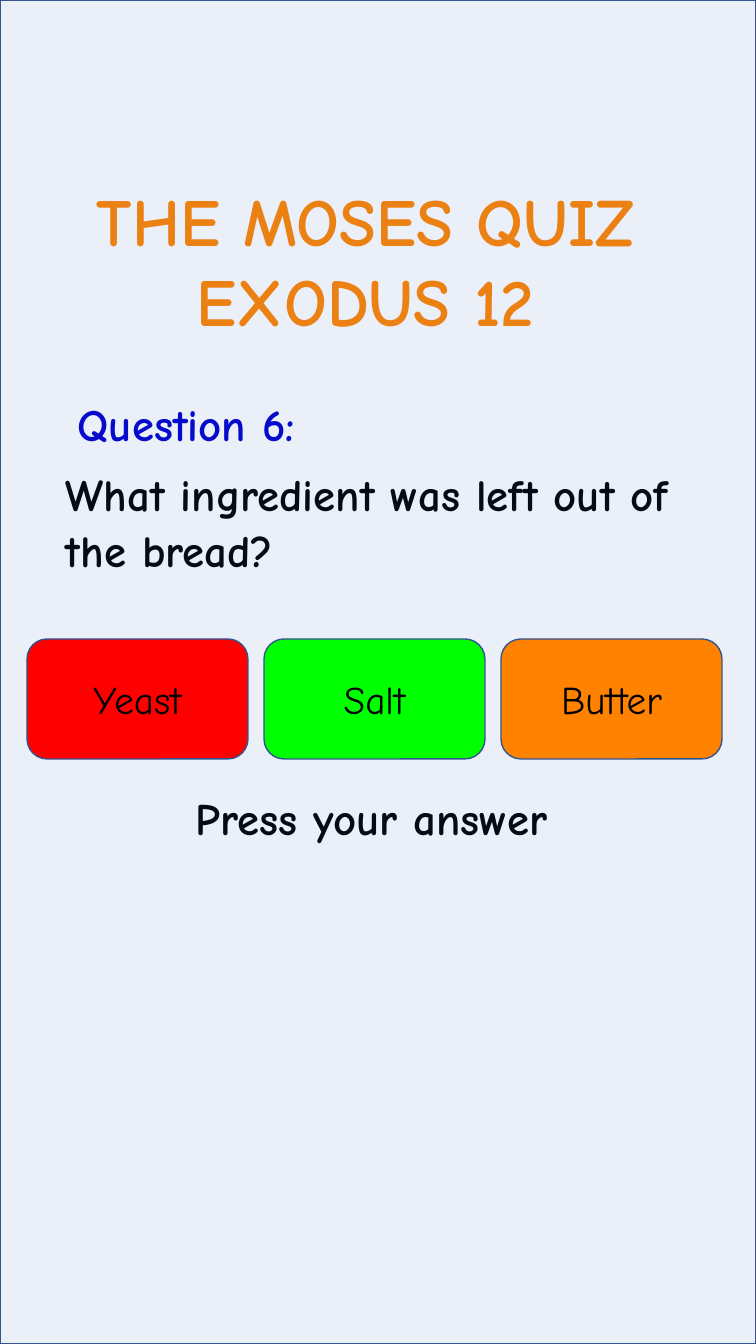
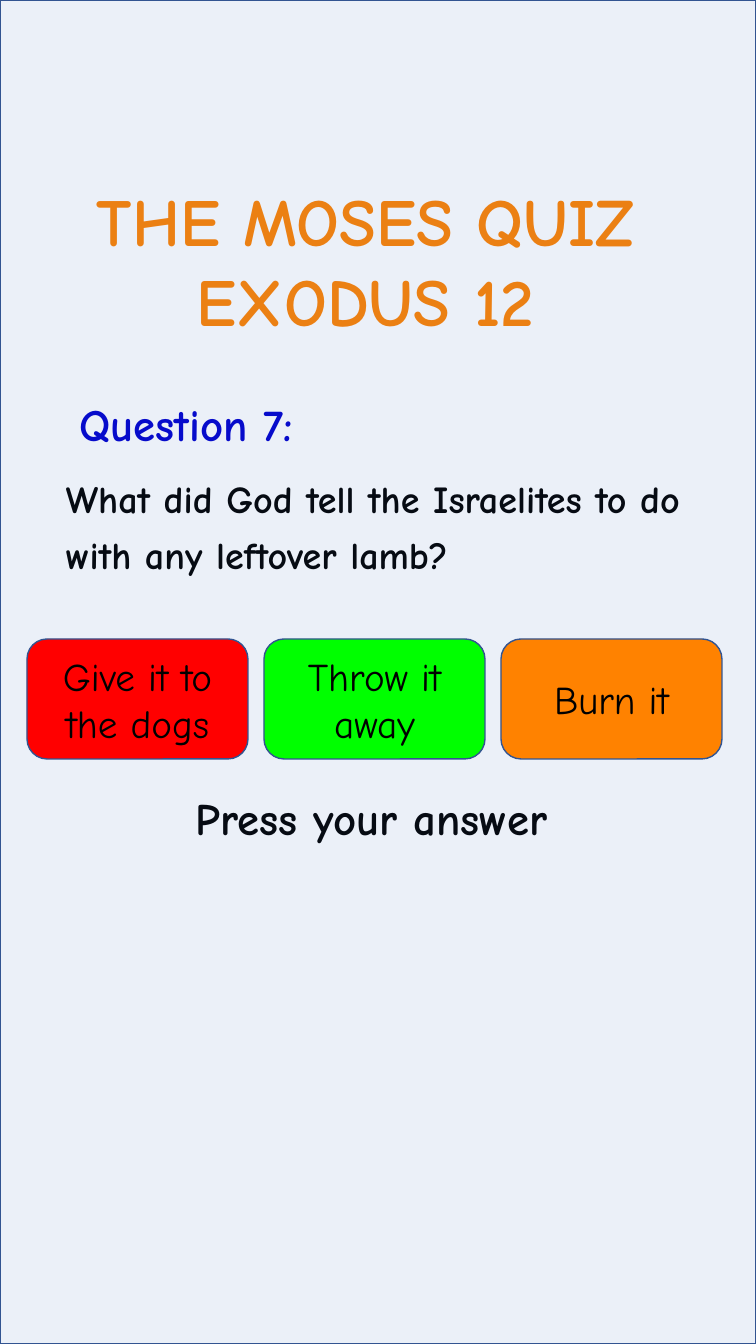
import dataclasses

import lxml.etree
import pptx
import pptx.dml.color
import pptx.enum.shapes
import pptx.enum.text
import pptx.oxml.ns
import pptx.util

EMU_PER_PX = 914400 / 100.8
ALIGN = pptx.enum.text.PP_ALIGN
ANCHOR = pptx.enum.text.MSO_ANCHOR
SHAPE = pptx.enum.shapes.MSO_SHAPE


@dataclasses.dataclass(frozen=True)
class Theme:
    font: str = "Comic Neue"
    title: str = "FF8200"
    title_outline: str = "FF0000"
    label: str = "0000CC"
    ink: str = "000000"
    veil: str = "4472C4"
    border: str = "325491"
    answers: tuple = ("FF0000", "00FF00", "FF8200")
    title_size: float = 48
    body_size: float = 32
    answer_size: float = 28


def px(length):
    return pptx.util.Emu(round(length * EMU_PER_PX))


def rgb(value):
    return pptx.dml.color.RGBColor.from_string(value)


def add_xml(parent, tag, **attributes):
    element = lxml.etree.SubElement(parent, pptx.oxml.ns.qn(tag))
    for name, value in attributes.items():
        element.set(name, value)
    return element


class QuizDeck:
    def __init__(self, theme, width, height):
        self.theme = theme
        self.width, self.height = width, height
        self.deck = pptx.Presentation()
        self.deck.slide_width, self.deck.slide_height = px(width), px(height)
        self.page = None

    def new_page(self):
        self.page = self.deck.slides.add_slide(self.deck.slide_layouts[6])

    def add_span(self, para, text, size, color, bold=True):
        span = para.add_run()
        span.text = text
        span.font.name = self.theme.font
        span.font.size = pptx.util.Pt(size)
        span.font.bold = bold
        span.font.color.rgb = rgb(color)
        return span

    def outline(self, span, color, width):
        """Draw a line around the letters of a run."""
        properties = span._r.get_or_add_rPr()
        line = add_xml(properties, "a:ln", w=str(pptx.util.Pt(width)))
        fill = add_xml(line, "a:solidFill")
        add_xml(fill, "a:srgbClr", val=color)
        properties.insert(0, line)

    def text_frame(self, bounds, grow=False):
        """Add a text box; a growing one fits its unwrapped text."""
        frame = self.page.shapes.add_textbox(*map(px, bounds)).text_frame
        frame.word_wrap = not grow
        if grow:
            frame.auto_size = pptx.enum.text.MSO_AUTO_SIZE.SHAPE_TO_FIT_TEXT
        return frame

    def title(self, lines):
        frame = self.text_frame((30, 174, 695, 173), grow=True)
        for index, line in enumerate(lines):
            para = frame.add_paragraph() if index else frame.paragraphs[0]
            para.alignment = ALIGN.CENTER
            span = self.add_span(para, line, self.theme.title_size, self.theme.title)
            self.outline(span, self.theme.title_outline, 1.06)

    def label(self, text):
        para = self.text_frame((47, 392, 279, 65), grow=True).paragraphs[0]
        para.alignment = ALIGN.CENTER
        self.add_span(para, text, self.theme.body_size, self.theme.label)

    def body(self, text, bounds, spacing, size=None):
        para = self.text_frame(bounds).paragraphs[0]
        para.line_spacing = spacing
        para.space_before = pptx.util.Pt(7.5)
        self.add_span(para, text, size or self.theme.body_size, self.theme.ink)

    def panel(self, kind, bounds, fill):
        box = self.page.shapes.add_shape(kind, *map(px, bounds))
        box.shadow.inherit = False
        box.fill.solid()
        box.fill.fore_color.rgb = rgb(fill)
        box.line.color.rgb = rgb(self.theme.border)
        box.line.width = pptx.util.Pt(1)
        return box

    def veil(self):
        """Tint the whole page with a nearly clear sheet."""
        box = self.panel(SHAPE.RECTANGLE, (0, 0, self.width, self.height), self.theme.veil)
        color = box._element.spPr.find(pptx.oxml.ns.qn("a:solidFill"))[0]
        add_xml(color, "a:alpha", val="10000")

    def answers(self, texts, left=27, top=639, width=221, height=120, pitch=237):
        for index, (text, fill) in enumerate(zip(texts, self.theme.answers)):
            bounds = (left + index * pitch, top, width, height)
            frame = self.panel(SHAPE.ROUNDED_RECTANGLE, bounds, fill).text_frame
            frame.word_wrap = True
            frame.vertical_anchor = ANCHOR.MIDDLE
            para = frame.paragraphs[0]
            para.alignment = ALIGN.CENTER
            self.add_span(para, text, self.theme.answer_size, self.theme.ink, bold=False)

    def question(self, number, text, answers, size=None):
        self.new_page()
        self.title(("THE MOSES QUIZ ", "EXODUS 12 "))
        self.label(f"Question {number}:")
        self.body(text, (56, 460, 650, 147), pptx.util.Pt(40), size)
        self.body("Press your answer", (186, 792, 425, 73), 0.9)
        self.veil()
        self.answers(answers)


def main():
    quiz = QuizDeck(Theme(), 756, 1344)
    quiz.question(6, "What ingredient was left out of the bread?",
                  ("Yeast", "Salt", "Butter"))
    quiz.question(7, "What did God tell the Israelites to do with any leftover lamb?",
                  ("Give it to the dogs", "Throw it away", "Burn it"), size=27.2)
    quiz.deck.save("out.pptx")


if __name__ == "__main__":
    main()
